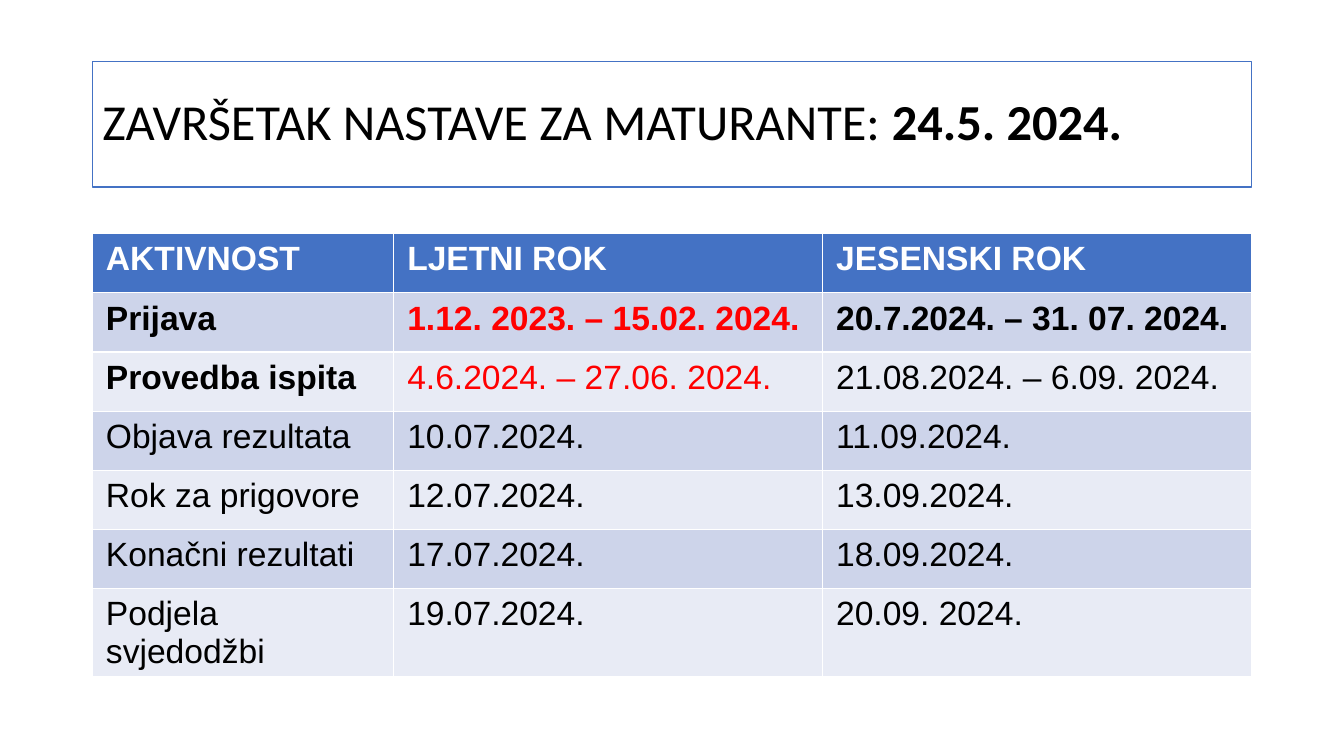
from pptx import Presentation
from pptx.dml.color import RGBColor
from pptx.enum.shapes import MSO_SHAPE
from pptx.enum.text import MSO_ANCHOR, PP_ALIGN
from pptx.util import Cm, Pt

RECTANGLE = MSO_SHAPE.RECTANGLE
MIDDLE = MSO_ANCHOR.MIDDLE
LEFT = PP_ALIGN.LEFT

BLUE = RGBColor(0x44, 0x72, 0xC4)
BAND_DARK = RGBColor(0xCD, 0xD4, 0xEA)
BAND_LIGHT = RGBColor(0xE8, 0xEB, 0xF5)
WHITE = RGBColor(0xFF, 0xFF, 0xFF)
BLACK = RGBColor(0x00, 0x00, 0x00)
RED = RGBColor(0xFF, 0x00, 0x00)

TITLE = [("ZAVRŠETAK NASTAVE ZA MATURANTE: ", False), ("24.5. 2024.", True)]
SCHEDULE = [
    ("AKTIVNOST", "LJETNI ROK", "JESENSKI ROK"),
    ("Prijava", "1.12. 2023. – 15.02. 2024.", "20.7.2024. – 31. 07. 2024."),
    ("Provedba ispita", "4.6.2024. – 27.06. 2024.", "21.08.2024. – 6.09. 2024."),
    ("Objava rezultata", "10.07.2024.", "11.09.2024."),
    ("Rok za prigovore", "12.07.2024.", "13.09.2024."),
    ("Konačni rezultati", "17.07.2024.", "18.09.2024."),
    ("Podjela svjedodžbi", "19.07.2024.", "20.09. 2024."),
]
BOLD_CELLS = {(1, 0), (1, 1), (1, 2), (2, 0)}
RED_CELLS = {(1, 1), (2, 1)}
COLUMN_SHARES = (0.26, 0.37, 0.37)


def format_font(font, name, size, color, bold):
    font.name = name
    font.size = Pt(size)
    font.color.rgb = color
    font.bold = bold


def add_title(page, left, top, width, height):
    box = page.shapes.add_shape(RECTANGLE, left, top, width, height)
    box.shadow.inherit = False
    box.fill.solid()
    box.fill.fore_color.rgb = WHITE
    box.line.color.rgb = BLUE
    box.line.width = Pt(1)
    frame = box.text_frame
    frame.word_wrap = True
    frame.vertical_anchor = MIDDLE
    para = frame.paragraphs[0]
    para.alignment = LEFT
    para.line_spacing = 0.9
    for text, bold in TITLE:
        span = para.add_run()
        span.text = text
        format_font(span.font, "Calibri", 36, BLACK, bold)


def fill_cell(cell, text, fill, color, bold):
    cell.text = text
    cell.margin_left = cell.margin_right = Cm(0.34)
    cell.margin_top = cell.margin_bottom = Cm(0.17)
    cell.fill.solid()
    cell.fill.fore_color.rgb = fill
    span = cell.text_frame.paragraphs[0].runs[0]
    format_font(span.font, "Arial", 24, color, bold)


def add_schedule(page, left, top, width, row_height):
    table = page.shapes.add_table(
        len(SCHEDULE), len(COLUMN_SHARES), left, top, width, row_height * len(SCHEDULE)
    ).table
    for column, share in zip(table.columns, COLUMN_SHARES):
        column.width = int(width * share)
    for row, texts in enumerate(SCHEDULE):
        table.rows[row].height = row_height
        for column, text in enumerate(texts):
            place = (row, column)
            if row == 0:
                fill, color, bold = BLUE, WHITE, True
            else:
                fill = BAND_DARK if row % 2 else BAND_LIGHT
                color = RED if place in RED_CELLS else BLACK
                bold = place in BOLD_CELLS
            fill_cell(table.cell(row, column), text, fill, color, bold)


def main():
    deck = Presentation()
    deck.slide_width = Cm(33.87)
    deck.slide_height = Cm(19.05)
    page = deck.slides.add_slide(deck.slide_layouts[6])
    left, width = Cm(2.33), Cm(29.21)
    add_title(page, left, Cm(1.55), width, Cm(3.16))
    add_schedule(page, left, Cm(5.89), width, Cm(1.49))
    deck.save("out.pptx")


if __name__ == "__main__":
    main()
